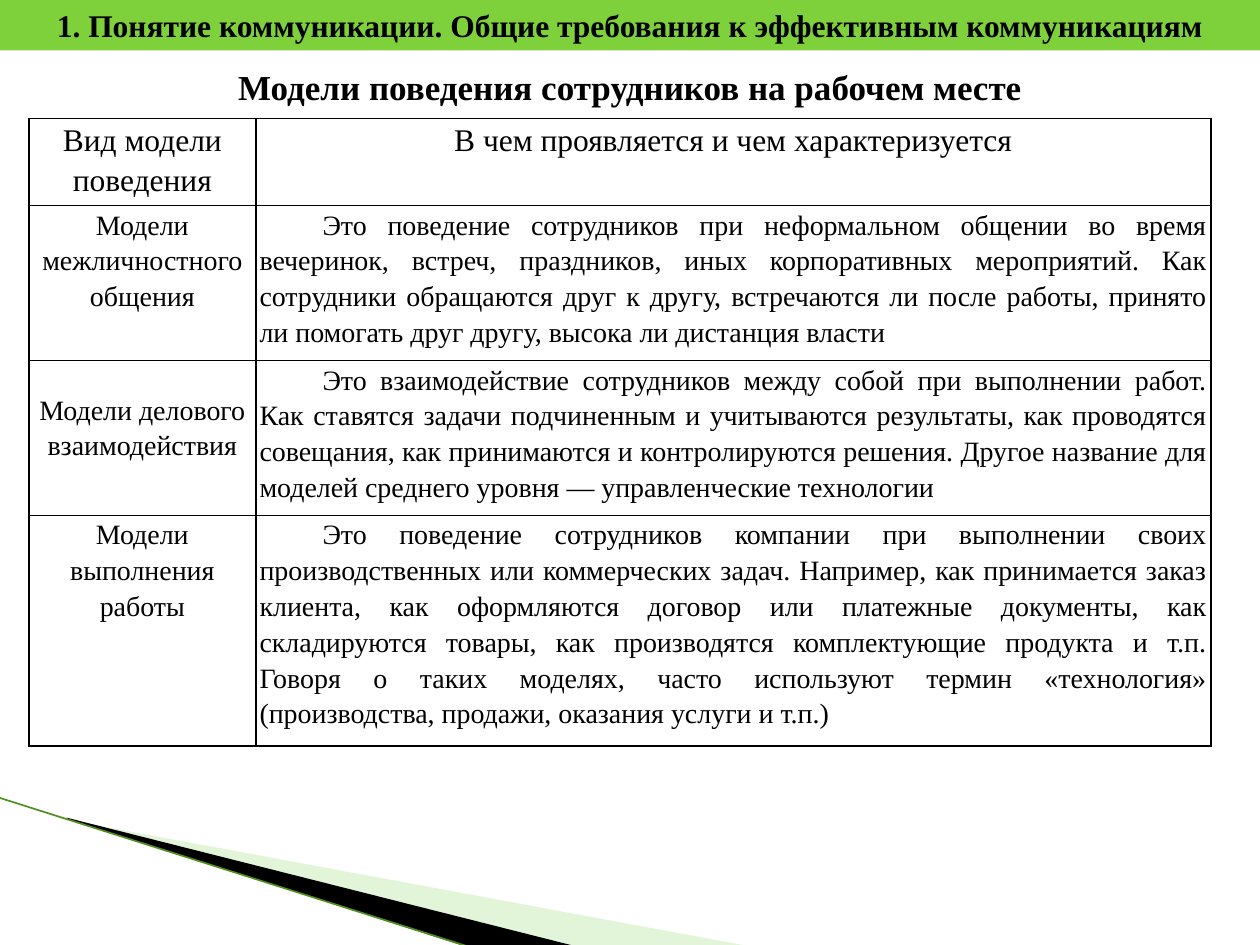
"""Build a slide with a table of employee behaviour models."""
import dataclasses

import lxml.etree
import pptx
import pptx.dml.color
import pptx.enum.shapes
import pptx.enum.text
import pptx.oxml
import pptx.oxml.ns
import pptx.util

Inches = pptx.util.Inches
Pt = pptx.util.Pt
RGBColor = pptx.dml.color.RGBColor
Align = pptx.enum.text.PP_ALIGN
Anchor = pptx.enum.text.MSO_ANCHOR
qn = pptx.oxml.ns.qn

FONT = "Times New Roman"
BLACK = RGBColor(0x00, 0x00, 0x00)
WHITE = RGBColor(0xFF, 0xFF, 0xFF)
GREEN = RGBColor(0x7F, 0xD1, 0x3B)
PALE_GREEN = RGBColor(0xB8, 0xE7, 0xA1)
DARK_GREEN = RGBColor(0x4F, 0x8F, 0x1F)


@dataclasses.dataclass(frozen=True)
class Wedge:
    frame: tuple[float, float, float, float]
    points: tuple[tuple[float, float], ...]
    color: RGBColor
    opacity: int = 100


@dataclasses.dataclass(frozen=True)
class Row:
    model: str
    description: str
    height: float
    size: int = 16
    model_top: float = 0
    heading: bool = False


WEDGES = (
    Wedge((0.78, 5.47, 4.16, 1.58),
          ((0.55, 6.51), (5.95, 7.51), (4.56, 7.51), (0.55, 6.5)), PALE_GREEN, 40),
    Wedge((-0.06, 6.33, 4.16, 0.92),
          ((0.53, 6.49), (4.57, 7.51), (3.72, 7.52), (0.54, 6.5)), BLACK),
)

COLUMN_WIDTHS = (1.8, 7.58)

ROWS = (
    Row("Вид модели поведения", "В чем проявляется и чем характеризуется",
        0.69, size=18, heading=True),
    Row("Модели межличностного общения",
        "Это поведение сотрудников при неформальном общении во время вечеринок, "
        "встреч, праздников, иных корпоративных мероприятий. Как сотрудники "
        "обращаются друг к другу, встречаются ли после работы, принято ли помогать "
        "друг другу, высока ли дистанция власти", 1.23),
    Row("Модели делового взаимодействия",
        "Это взаимодействие сотрудников между собой при выполнении работ. Как "
        "ставятся задачи подчиненным и учитываются результаты, как проводятся "
        "совещания, как принимаются и контролируются решения. Другое название для "
        "моделей среднего уровня — управленческие технологии", 1.23, model_top=0.24),
    Row("Модели выполнения работы",
        "Это поведение сотрудников компании при выполнении своих производственных "
        "или коммерческих задач. Например, как принимается заказ клиента, как "
        "оформляются договор или платежные документы, как складируются товары, как "
        "производятся комплектующие продукта и т.п. Говоря о таких моделях, часто "
        "используют термин «технология» (производства, продажи, оказания услуги "
        "и т.п.)", 1.83),
)


def write(frame, text: str, size: int, align, bold: bool = False):
    frame.text = text
    frame.word_wrap = True
    para = frame.paragraphs[0]
    para.alignment = align
    font = para.runs[0].font
    font.name = FONT
    font.size = Pt(size)
    font.bold = bold
    font.color.rgb = BLACK
    return para


def set_frame(shape, frame: tuple[float, float, float, float]) -> None:
    left, top, width, height = (Inches(value) for value in frame)
    shift_x, shift_y = shape.left - left, shape.top - top
    outline = next(shape._element.iter(qn("a:path")))
    outline.set("w", str(width))
    outline.set("h", str(height))
    for point in outline.iter(qn("a:pt")):
        point.set("x", str(int(point.get("x")) + shift_x))
        point.set("y", str(int(point.get("y")) + shift_y))
    shape.left, shape.top, shape.width, shape.height = left, top, width, height


def draw_wedge(page, wedge: Wedge) -> None:
    start, *rest = [(Inches(x), Inches(y)) for x, y in wedge.points]
    builder = page.shapes.build_freeform(*start)
    builder.add_line_segments(rest, close=True)
    shape = builder.convert_to_shape()
    set_frame(shape, wedge.frame)
    shape.shadow.inherit = False
    shape.line.fill.background()
    shape.fill.solid()
    shape.fill.fore_color.rgb = wedge.color
    if wedge.opacity < 100:
        color = shape.fill._xPr.find(qn("a:solidFill"))[0]
        lxml.etree.SubElement(color, qn("a:alpha")).set("val", str(wedge.opacity * 1000))


def draw_edge(page) -> None:
    edge = page.shapes.add_connector(
        pptx.enum.shapes.MSO_CONNECTOR.STRAIGHT,
        Inches(-0.01), Inches(6.33), Inches(3.74), Inches(7.52))
    edge.line.color.rgb = DARK_GREEN
    edge.line.width = Pt(0.95)
    lxml.etree.SubElement(edge._element.spPr, qn("a:effectLst"))


def draw_heading_bar(page) -> None:
    bar = page.shapes.add_shape(
        pptx.enum.shapes.MSO_SHAPE.RECTANGLE, 0, 0, Inches(10), Inches(0.4))
    bar.shadow.inherit = False
    bar.fill.solid()
    bar.fill.fore_color.rgb = GREEN
    bar.line.fill.background()
    write(bar.text_frame,
          "1. Понятие коммуникации. Общие требования к эффективным коммуникациям",
          18, Align.CENTER, bold=True)


def draw_title(page) -> None:
    box = page.shapes.add_textbox(0, Inches(0.47), Inches(10), Inches(0.44))
    box.text_frame.vertical_anchor = Anchor.MIDDLE
    write(box.text_frame, "Модели поведения сотрудников на рабочем месте",
          20, Align.CENTER, bold=True)


def fill_cell(cell, text: str, size: int, align, top: float = 0):
    properties = cell._tc.get_or_add_tcPr()
    for side in ("lnL", "lnR", "lnT", "lnB"):
        border = lxml.etree.SubElement(properties, qn(f"a:{side}"), w=str(Pt(1)))
        paint = lxml.etree.SubElement(border, qn("a:solidFill"))
        lxml.etree.SubElement(paint, qn("a:srgbClr"), val=str(BLACK))
    cell.fill.solid()
    cell.fill.fore_color.rgb = WHITE
    cell.margin_left = cell.margin_right = Inches(0.03)
    cell.margin_top = Inches(top)
    cell.margin_bottom = 0
    para = write(cell.text_frame, text, size, align)
    para.line_spacing = 1.15
    return para


def draw_table(page) -> None:
    table = page.shapes.add_table(
        len(ROWS), len(COLUMN_WIDTHS), Inches(0.23), Inches(0.94),
        Inches(sum(COLUMN_WIDTHS)), Inches(sum(row.height for row in ROWS))).table
    table.first_row = table.horz_banding = False
    for column, width in zip(table.columns, COLUMN_WIDTHS):
        column.width = Inches(width)
    for index, row in enumerate(ROWS):
        table.rows[index].height = Inches(row.height)
        fill_cell(table.cell(index, 0), row.model, row.size, Align.CENTER, row.model_top)
        align = Align.CENTER if row.heading else Align.JUSTIFY
        para = fill_cell(table.cell(index, 1), row.description, row.size, align)
        if not row.heading:
            para._p.get_or_add_pPr().set("indent", str(Inches(0.5)))


def main() -> None:
    deck = pptx.Presentation()
    deck.slide_width = Inches(10)
    deck.slide_height = Inches(7.5)
    page = deck.slides.add_slide(deck.slide_layouts[6])
    for wedge in WEDGES:
        draw_wedge(page, wedge)
    draw_edge(page)
    draw_heading_bar(page)
    draw_table(page)
    draw_title(page)
    deck.save("out.pptx")


if __name__ == "__main__":
    main()
